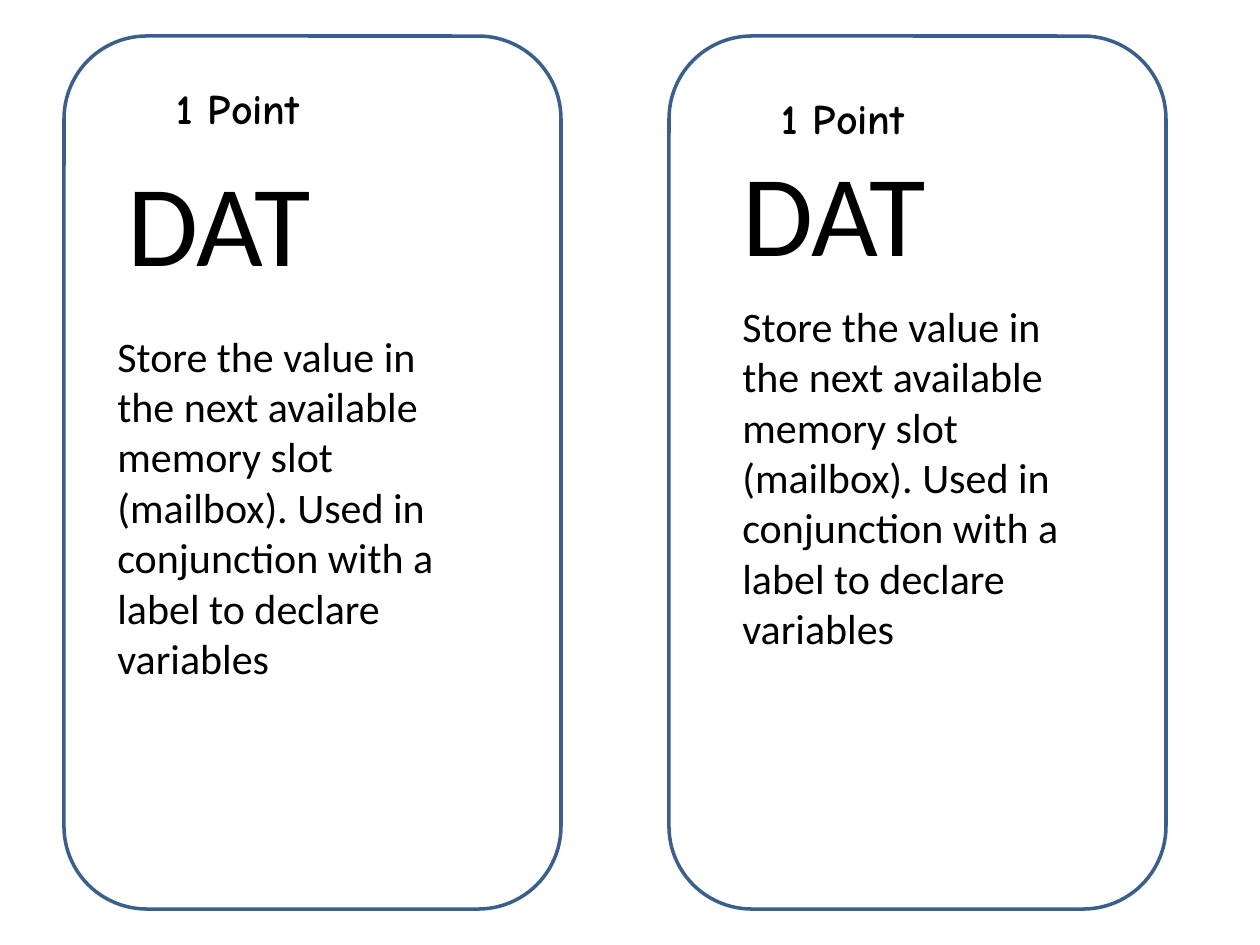
"""Build a slide with two instruction cards for the DAT mnemonic."""
from dataclasses import dataclass

from pptx import Presentation
from pptx.dml.color import RGBColor
from pptx.enum.shapes import MSO_SHAPE
from pptx.enum.text import MSO_AUTO_SIZE
from pptx.slide import Slide
from pptx.util import Emu, Pt

PX_PER_INCH = 126
DESCRIPTION = (
    "Store the value in the next available memory slot (mailbox). "
    "Used in conjunction with a label to declare variables"
)


@dataclass(frozen=True)
class Card:
    left: int
    points_at: tuple[int, int]
    mnemonic_at: tuple[int, int]
    description_at: tuple[int, int]


CARDS = [
    Card(64, (164, 76), (115, 145), (105, 324)),
    Card(669, (769, 86), (730, 135), (730, 294)),
]


def px(n: int) -> Emu:
    return Emu(round(n * 914400 / PX_PER_INCH))


def rgb(value: str) -> RGBColor:
    return RGBColor.from_string(value)


def add_outline(s: Slide, left: int) -> None:
    sp = s.shapes.add_shape(
        MSO_SHAPE.ROUNDED_RECTANGLE, px(left), px(36), px(497), px(873)
    )
    sp.shadow.inherit = False
    sp.fill.background()
    sp.line.color.rgb = rgb("3A5F8C")
    sp.line.width = Pt(2)


def add_text(
    s: Slide, text: str, at: tuple[int, int], *, width: int, height: int,
    size: int = 24, font: str = "Calibri", bold: bool = False,
    color: str = "000000",
) -> None:
    left, top = at
    sp = s.shapes.add_textbox(px(left), px(top), px(width), px(height))
    tf = sp.text_frame
    tf.word_wrap = True
    tf.auto_size = MSO_AUTO_SIZE.SHAPE_TO_FIT_TEXT
    r = tf.paragraphs[0].add_run()
    r.text = text
    r.font.size = Pt(size)
    r.font.name = font
    r.font.bold = bold
    r.font.color.rgb = rgb(color)


def add_card(s: Slide, card: Card) -> None:
    add_outline(s, card.left)
    add_text(s, "DAT", card.mnemonic_at, width=397, height=152, size=66)
    add_text(s, DESCRIPTION, card.description_at, width=367, height=369)
    add_text(s, "1 Point", card.points_at, width=297, height=63,
             font="Comic Neue", bold=True)


def main() -> None:
    prs = Presentation()
    prs.slide_width, prs.slide_height = px(1260), px(945)
    s = prs.slides.add_slide(prs.slide_layouts[6])
    for card in CARDS:
        add_card(s, card)
    prs.save("out.pptx")


if __name__ == "__main__":
    main()
